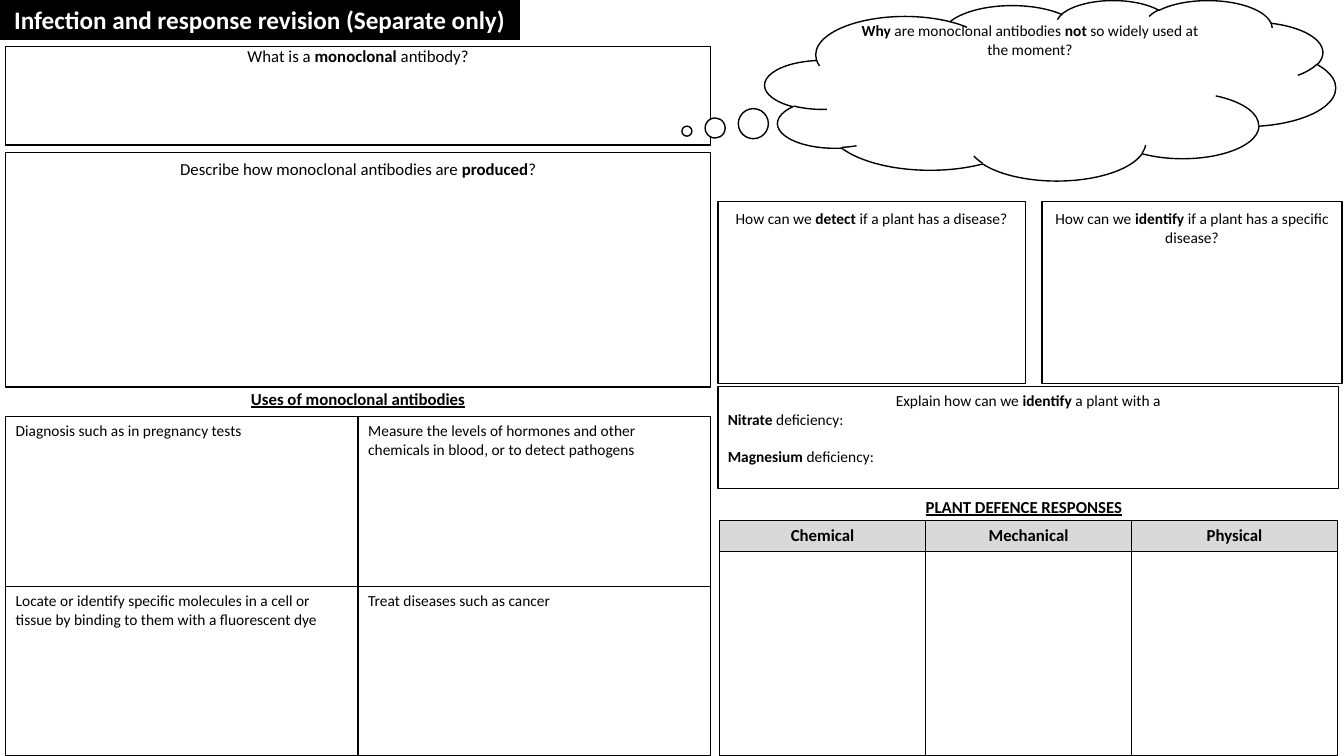
import pptx
import pptx.util
import pptx.dml.color
import pptx.enum.shapes
import pptx.enum.text
import pptx.oxml.ns
import lxml.etree

Pt = pptx.util.Pt
RGB = pptx.dml.color.RGBColor.from_string
MID = pptx.enum.text.MSO_ANCHOR.MIDDLE
LEFT = pptx.enum.text.PP_ALIGN.LEFT
CENTER = pptx.enum.text.PP_ALIGN.CENTER
KIND = pptx.enum.shapes.MSO_SHAPE
HUE = {"ink": "000000", "paper": "FFFFFF", "head": "D9D9D9"}
LEAD = 1.2  # line height as a share of the font size

deck = pptx.Presentation()
deck.slide_width, deck.slide_height = Pt(960), Pt(540)
slide = deck.slides.add_slide(deck.slide_layouts[6])


def write(para, text, size, align=CENTER, hue="ink", under=False):
    """Fill a paragraph; words between asterisks are bold."""
    para.alignment = align
    for turn, part in enumerate(text.split("*")):
        if part:
            run = para.add_run()
            run.text = part
            run.font.name = "Calibri"
            run.font.size = Pt(size)
            run.font.bold = turn % 2 == 1
            run.font.underline = under
            run.font.color.rgb = RGB(HUE[hue])


def edge(cell):
    """Give a cell a thin dark border on all sides."""
    props = cell._tc.get_or_add_tcPr()
    for spot, side in enumerate(("lnL", "lnR", "lnT", "lnB")):
        line = lxml.etree.Element(pptx.oxml.ns.qn("a:" + side), w=str(Pt(1)))
        fill = lxml.etree.SubElement(line, pptx.oxml.ns.qn("a:solidFill"))
        lxml.etree.SubElement(fill, pptx.oxml.ns.qn("a:srgbClr"), val=HUE["ink"])
        props.insert(spot, line)


# Tables: place, row heights, size, alignment, header flag, texts
tables = [
    ((4, 297.4, 503.6), (121.3, 121.3), 11, LEFT, False, [
        ["Diagnosis such as in pregnancy tests",
         "Measure the levels of hormones and other chemicals in blood, or to detect pathogens"],
        ["Locate or identify specific molecules in a cell or tissue by binding to them "
         "with a fluorescent dye",
         "Treat diseases such as cancer"]]),
    ((514, 371.9, 441.4), (21.8, 146.3), 12, CENTER, True, [
        ["*Chemical*", "*Mechanical*", "*Physical*"], ["", "", ""]]),
]
for (left, top, width), highs, size, align, head, texts in tables:
    count = len(texts[0])
    grid = slide.shapes.add_table(len(highs), count, Pt(left), Pt(top),
                                  Pt(width), Pt(sum(highs))).table
    grid.first_row = grid.horz_banding = False
    for col in grid.columns:
        col.width = Pt(width / count)
    for row, high in enumerate(highs):
        grid.rows[row].height = Pt(high)
        for col, text in enumerate(texts[row]):
            cell = grid.cell(row, col)
            if head and row == 0:
                cell.fill.solid()
                cell.fill.fore_color.rgb = RGB(HUE["head"])
            else:
                cell.fill.background()
            edge(cell)
            write(cell.text_frame.paragraphs[0], text, size, align)

# Boxes: shape, place, fill, text colour, size, lines left free below, text
boxes = [
    (KIND.RECTANGLE, (0, 0, 371, 28.1), "ink", "paper", 18, 0,
     "*Infection and response revision (Separate only)*"),
    (KIND.RECTANGLE, (4, 33.1, 503.6, 70.6), "paper", "ink", 12, 4,
     "What is a *monoclonal* antibody?"),
    (KIND.RECTANGLE, (4, 108.9, 503.6, 167.5), "paper", "ink", 12, 10,
     "Describe how monoclonal antibodies are *produced*?"),
    (KIND.CLOUD_CALLOUT, (546.5, 0, 407.5, 128.9), "paper", "ink", 11, 5,
     "*Why* are monoclonal antibodies *not* so widely used at the moment?"),
    (KIND.RECTANGLE, (512.8, 144, 219.6, 129.8), "paper", "ink", 11, 8,
     "How can we *detect* if a plant has a disease?"),
    (KIND.RECTANGLE, (744.3, 144, 214.4, 129.8), "paper", "ink", 11, 7,
     "How can we *identify* if a plant has a specific disease?"),
    (KIND.RECTANGLE, (512.8, 276.2, 443.5, 72.7), "paper", "ink", 11, 1,
     "Explain how can we *identify* a plant with a"),
]
for kind, place, fill, hue, size, free, text in boxes:
    box = slide.shapes.add_shape(kind, *[Pt(n) for n in place])
    box.shadow.inherit = False
    box.fill.solid()
    box.fill.fore_color.rgb = RGB(HUE[fill])
    box.line.color.rgb = RGB(HUE["ink"])
    box.line.width = Pt(1)
    if kind == KIND.CLOUD_CALLOUT:
        box.adjustments[0], box.adjustments[1] = -0.637, 0.227
    frame = box.text_frame
    frame.word_wrap = True
    frame.vertical_anchor = MID
    frame.margin_top = 0
    frame.margin_bottom = Pt(free * size * LEAD)
    write(frame.paragraphs[0], text, size, hue=hue)

# Deficiency prompts in the last box
for text, gap in (("*Nitrate* deficiency:", 0), ("*Magnesium* deficiency:", 13.4)):
    para = frame.add_paragraph()
    para.space_before = Pt(gap)
    write(para, text, 11, LEFT)

# Headings above the tables
for left, top, width, text in (
        (4, 273.9, 503.6, "*Uses of monoclonal antibodies*"),
        (546.8, 351.1, 369.4, "*PLANT DEFENCE RESPONSES*")):
    label = slide.shapes.add_textbox(Pt(left), Pt(top), Pt(width), Pt(21.8))
    label.text_frame.word_wrap = True
    write(label.text_frame.paragraphs[0], text, 12, under=True)

deck.save("out.pptx")
